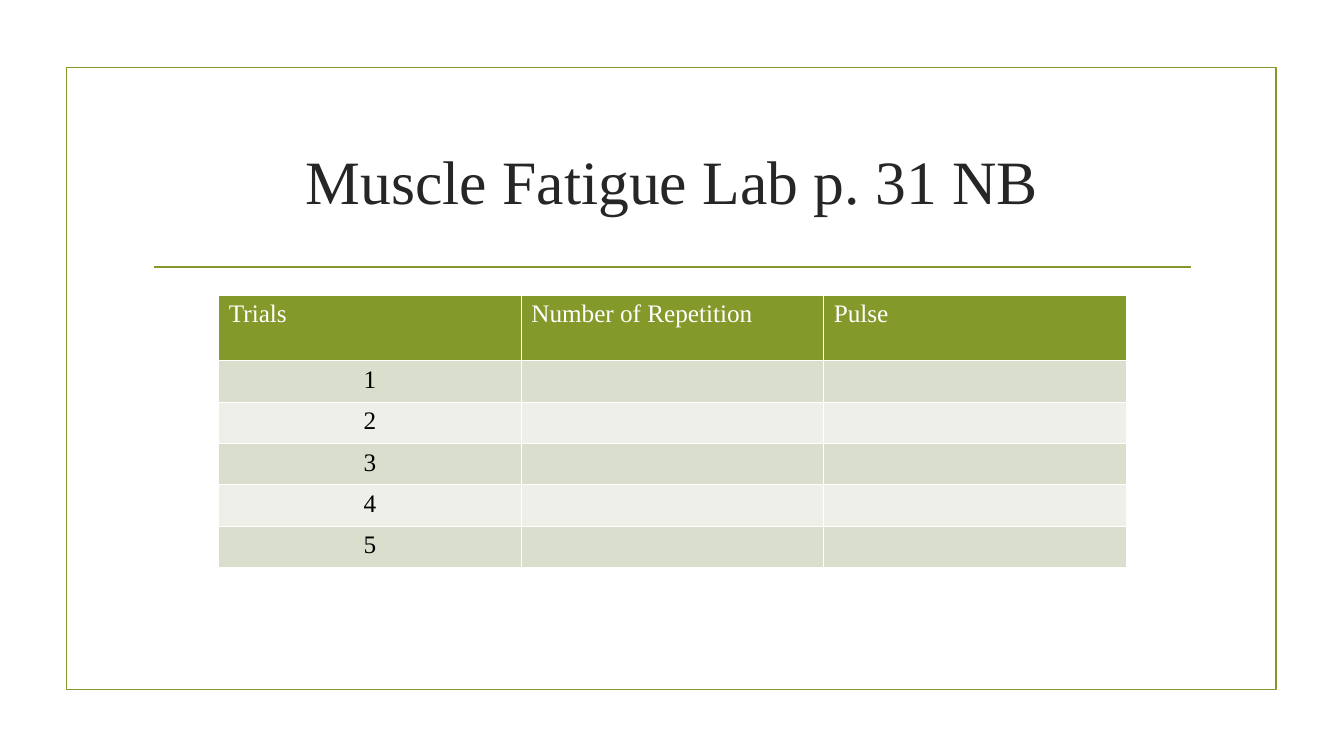
from lxml import etree
from pptx import Presentation
from pptx.dml.color import RGBColor
from pptx.enum.shapes import MSO_CONNECTOR, MSO_SHAPE
from pptx.enum.text import MSO_ANCHOR, PP_ALIGN
from pptx.oxml.ns import qn
from pptx.util import Inches, Pt

CENTER, LEFT = PP_ALIGN.CENTER, PP_ALIGN.LEFT
MIDDLE = MSO_ANCHOR.MIDDLE
RECTANGLE = MSO_SHAPE.RECTANGLE
STRAIGHT = MSO_CONNECTOR.STRAIGHT

FONT = "Times New Roman"
COLORS = {
    "green": "83992A",
    "title": "262626",
    "white": "FFFFFF",
    "black": "000000",
    "dark_band": "D9DECD",
    "light_band": "EDEFE8",
}
HEADERS = ["Trials", "Number of Repetition", "Pulse"]
TRIALS = 5


def color(name):
    return RGBColor.from_string(COLORS[name])


def add_cell_borders(cell):
    """Draw a 1 pt white line on all four sides of a table cell."""
    properties = cell._tc.get_or_add_tcPr()
    for side in ("a:lnL", "a:lnR", "a:lnT", "a:lnB"):
        line = etree.SubElement(properties, qn(side), w=str(Pt(1)))
        fill = etree.SubElement(line, qn("a:solidFill"))
        etree.SubElement(fill, qn("a:srgbClr"), val=COLORS["white"])


presentation = Presentation()
presentation.slide_width = Inches(13.33)
presentation.slide_height = Inches(7.5)
slide = presentation.slides.add_slide(presentation.slide_layouts[6])

# Frame and title rule
frame = slide.shapes.add_shape(
    RECTANGLE, Inches(0.66), Inches(0.67), Inches(12), Inches(6.17))
frame.shadow.inherit = False
frame.fill.background()

rule = slide.shapes.add_connector(
    STRAIGHT, Inches(1.53), Inches(2.65), Inches(11.81), Inches(2.65))
etree.SubElement(rule._element.spPr, qn("a:effectLst"))

for outlined in (frame, rule):
    outlined.line.color.rgb = color("green")
    outlined.line.width = Pt(1.25)

# Title
title = slide.shapes.add_textbox(
    Inches(1.42), Inches(1.07), Inches(10.5), Inches(1.43))
title.text_frame.word_wrap = True
title.text_frame.vertical_anchor = MIDDLE
paragraph = title.text_frame.paragraphs[0]
paragraph.text = "Muscle Fatigue Lab p. 31 NB"
paragraph.alignment = CENTER
paragraph.font.name = FONT
paragraph.font.size = Pt(44)
paragraph.font.color.rgb = color("title")

# Results table
rows = [HEADERS] + [[str(trial), "", ""] for trial in range(1, TRIALS + 1)]
table = slide.shapes.add_table(
    len(rows), len(HEADERS),
    Inches(2.17), Inches(2.93), Inches(9), Inches(2.7)).table

for row_index, row in enumerate(rows):
    is_header = row_index == 0
    table.rows[row_index].height = Inches(0.65 if is_header else 0.41)
    if is_header:
        fill_name = "green"
    else:
        fill_name = "dark_band" if row_index % 2 else "light_band"
    for column_index, text in enumerate(row):
        cell = table.cell(row_index, column_index)
        add_cell_borders(cell)
        cell.fill.solid()
        cell.fill.fore_color.rgb = color(fill_name)
        paragraph = cell.text_frame.paragraphs[0]
        paragraph.text = text
        paragraph.alignment = LEFT if is_header else CENTER
        paragraph.font.name = FONT
        paragraph.font.size = Pt(18)
        paragraph.font.bold = False
        paragraph.font.color.rgb = color("white" if is_header else "black")

presentation.save("out.pptx")
